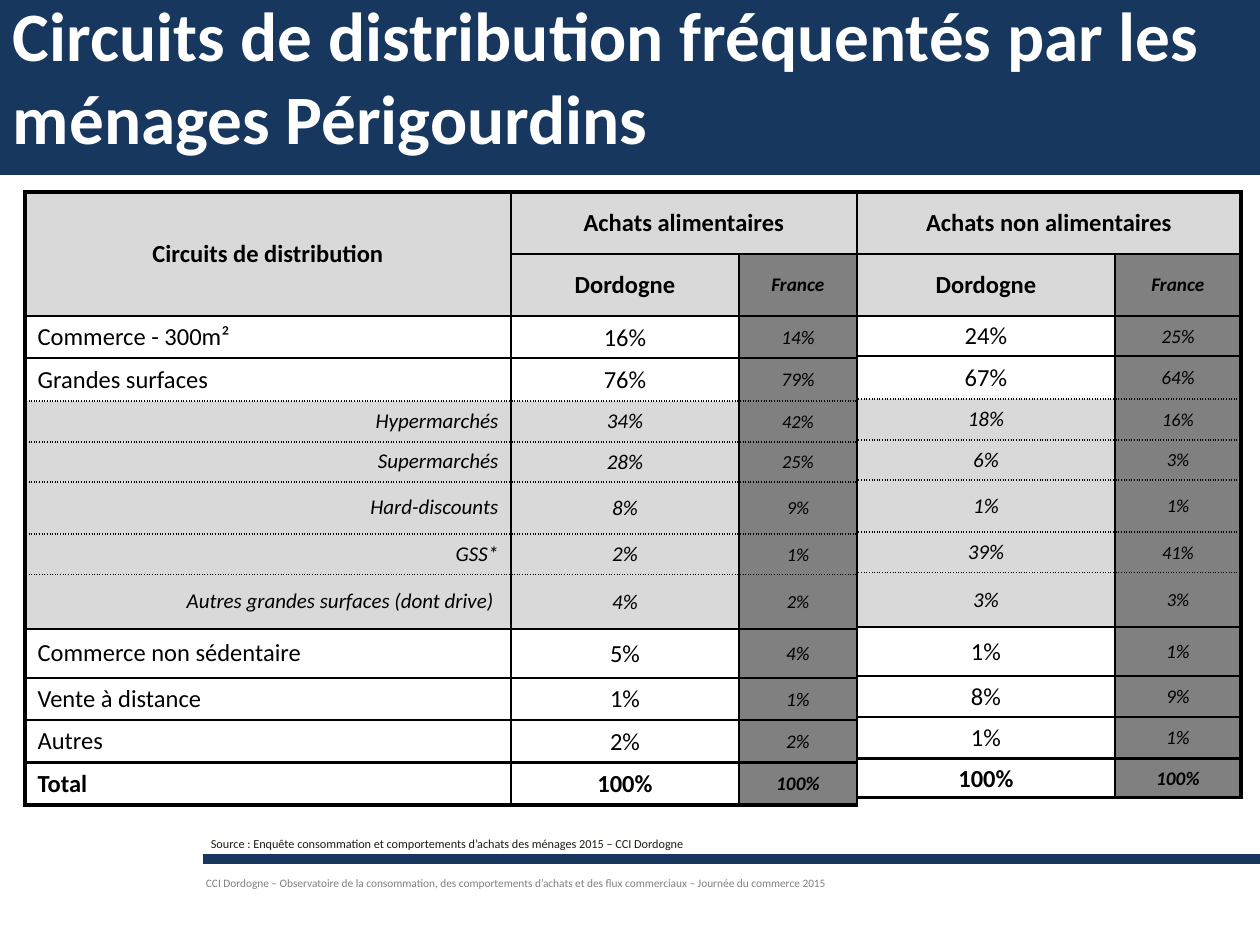
from lxml import etree
from pptx import Presentation
from pptx.dml.color import RGBColor
from pptx.enum.shapes import MSO_CONNECTOR, MSO_SHAPE
from pptx.enum.text import MSO_ANCHOR, PP_ALIGN
from pptx.oxml.ns import qn
from pptx.util import Emu, Pt

NAVY = RGBColor(0x17, 0x37, 0x5E)
WHITE = RGBColor(0xFF, 0xFF, 0xFF)
BLACK = RGBColor(0, 0, 0)
LIGHT = RGBColor(0xD9, 0xD9, 0xD9)
GREY = RGBColor(0x80, 0x80, 0x80)
INK = RGBColor(0x1E, 0x1C, 0x11)
FONT = "Calibri"

# Content
TITLE = "Circuits de distribution fréquentés par les ménages Périgourdins"
SOURCE = ("Source : Enquête consommation et comportements d’achats "
          "des ménages 2015 – CCI Dordogne")
FOOTER = ("CCI Dordogne – Observatoire de la consommation, des comportements "
          "d’achats et des flux commerciaux – Journée du commerce 2015")
FOOD = [
    ("Circuits de distribution", "Achats alimentaires", ""),
    ("", "Dordogne", "France"),
    ("Commerce - 300m²", "16%", "14%"),
    ("Grandes surfaces", "76%", "79%"),
    ("Hypermarchés", "34%", "42%"),
    ("Supermarchés", "28%", "25%"),
    ("Hard-discounts", "8%", "9%"),
    ("GSS*", "2%", "1%"),
    ("Autres grandes surfaces (dont drive) ", "4%", "2%"),
    ("Commerce non sédentaire", "5%", "4%"),
    ("Vente à distance", "1%", "1%"),
    ("Autres", "2%", "2%"),
    ("Total", "100%", "100%"),
]
NON_FOOD = [
    ("Achats non alimentaires", ""), ("Dordogne", "France"),
    ("24%", "25%"), ("67%", "64%"), ("18%", "16%"), ("6%", "3%"),
    ("1%", "1%"), ("39%", "41%"), ("3%", "3%"), ("1%", "1%"),
    ("8%", "9%"), ("1%", "1%"), ("100%", "100%"),
]
FOOD_COLS = [486, 228, 118]
NON_FOOD_COLS = [258, 126]
FOOD_ROWS = [62, 62, 41, 42, 41, 40, 52, 41, 54, 49, 42, 41, 41]
NON_FOOD_ROWS = [62, 62, 40, 43, 41, 40, 52, 41, 54, 49, 41, 42, 39]
HEADER_ROWS = range(2)
DETAIL_ROWS = range(4, 9)
THIN, THICK, DOTTED = 1.5, 2.25, 1


def px(n):
    return Emu(round(n * 914400 / 126))


def style(p, size, color, bold=False, italic=False):
    for r in p.runs:
        f = r.font
        f.name, f.size, f.bold, f.italic = FONT, Pt(size), bold, italic
        f.color.rgb = color


def set_margins(box, left, top, right, bottom):
    box.margin_left, box.margin_top = px(left), px(top)
    box.margin_right, box.margin_bottom = px(right), px(bottom)


def set_borders(cell, widths):
    tcPr = cell._tc.get_or_add_tcPr()
    for i, (side, width) in enumerate(widths.items()):
        ln = etree.Element(qn(f"a:ln{side}"), w=str(Pt(width)))
        fill = etree.SubElement(ln, qn("a:solidFill"))
        etree.SubElement(fill, qn("a:srgbClr"), val=str(BLACK))
        dash = "sysDot" if width == DOTTED else "solid"
        etree.SubElement(ln, qn("a:prstDash"), val=dash)
        tcPr.insert(i, ln)


def format_cell(cell, text, row, is_label, is_france):
    header, detail = row in HEADER_ROWS, row in DETAIL_ROWS
    cell.text = text
    cell.vertical_anchor = MSO_ANCHOR.MIDDLE
    if not header and not is_label:
        set_margins(cell, 1, 1, 1, 0)
    p = cell.text_frame.paragraphs[0]
    if header or not is_label:
        p.alignment = PP_ALIGN.CENTER
    else:
        p.alignment = PP_ALIGN.RIGHT if detail else PP_ALIGN.LEFT
    if is_france:
        size = 10.5 if detail else 11
    else:
        size = 12 if detail else 14
    style(p, size, BLACK, header or row == len(FOOD) - 1, is_france or detail)
    if is_france or header or detail:
        cell.fill.solid()
        cell.fill.fore_color.rgb = GREY if is_france else LIGHT
    else:
        cell.fill.background()


def add_grid(slide, left, data, cols, rows, has_labels):
    n_rows, n_cols = len(data), len(cols)
    table = slide.shapes.add_table(n_rows, n_cols, px(left), px(192),
                                   px(sum(cols)), px(sum(rows))).table
    table.first_row = table.horz_banding = False
    for column, width in zip(table.columns, cols):
        column.width = px(width)
    for row, height in zip(table.rows, rows):
        row.height = px(height)
    table.cell(0, n_cols - 2).merge(table.cell(0, n_cols - 1))
    if has_labels:
        table.cell(0, 0).merge(table.cell(1, 0))
    for i, texts in enumerate(data):
        for j, text in enumerate(texts):
            cell = table.cell(i, j)
            is_france = j == n_cols - 1 and i > 0
            format_cell(cell, text, i, has_labels and j == 0, is_france)
            top = DOTTED if i in DETAIL_ROWS else THIN
            bottom = DOTTED if i + 1 in DETAIL_ROWS else THIN
            at_right = not has_labels and (j == n_cols - 1 or i == 0)
            set_borders(cell, {
                "L": THICK if has_labels and j == 0 else THIN,
                "R": THICK if at_right else THIN,
                "T": THICK if i == 0 else top,
                "B": THICK if i == n_rows - 1 else bottom,
            })


def add_note(slide, box, margins, text, size, color, anchor):
    tf = slide.shapes.add_textbox(*map(px, box)).text_frame
    tf.word_wrap = True
    tf.vertical_anchor = anchor
    set_margins(tf, *margins)
    tf.text = text
    style(tf.paragraphs[0], size, color)


def main():
    prs = Presentation()
    prs.slide_width, prs.slide_height = px(1260), px(945)
    slide = prs.slides.add_slide(prs.slide_layouts[5])
    title = slide.shapes.title

    # Title band and footer rule, behind everything else
    band = slide.shapes.add_shape(MSO_SHAPE.RECTANGLE, 0, 0, px(1260), px(175))
    band.shadow.inherit = False
    band.fill.solid()
    band.fill.fore_color.rgb = NAVY
    band.line.fill.background()
    rule = slide.shapes.add_connector(MSO_CONNECTOR.STRAIGHT,
                                      px(203), px(859), px(1260), px(859))
    rule.line.color.rgb = NAVY
    rule.line.width = Pt(6)
    etree.SubElement(rule._element.spPr, qn("a:effectLst"))
    for s in (band, rule):
        title._element.addprevious(s._element)

    # Title
    title.left, title.top, title.width, title.height = map(px, (0, 36, 1275, 117))
    tf = title.text_frame
    tf.text = TITLE
    tf.word_wrap = True
    tf.vertical_anchor = MSO_ANCHOR.MIDDLE
    set_margins(tf, 13, 6, 13, 44)
    tf.paragraphs[0].alignment = PP_ALIGN.LEFT
    style(tf.paragraphs[0], 39.6, WHITE, bold=True)

    # Tables side by side
    add_grid(slide, 25, FOOD, FOOD_COLS, FOOD_ROWS, True)
    add_grid(slide, 25 + sum(FOOD_COLS), NON_FOOD, NON_FOOD_COLS,
             NON_FOOD_ROWS, False)

    # Source and footer
    add_note(slide, (203, 829, 704, 30), (8, 5, 5, 5), SOURCE, 7, INK,
             MSO_ANCHOR.MIDDLE)
    add_note(slide, (194, 858, 942, 40), (12, 22, 12, 0), FOOTER, 6.5, GREY,
             MSO_ANCHOR.TOP)
    prs.save("out.pptx")


if __name__ == "__main__":
    main()
